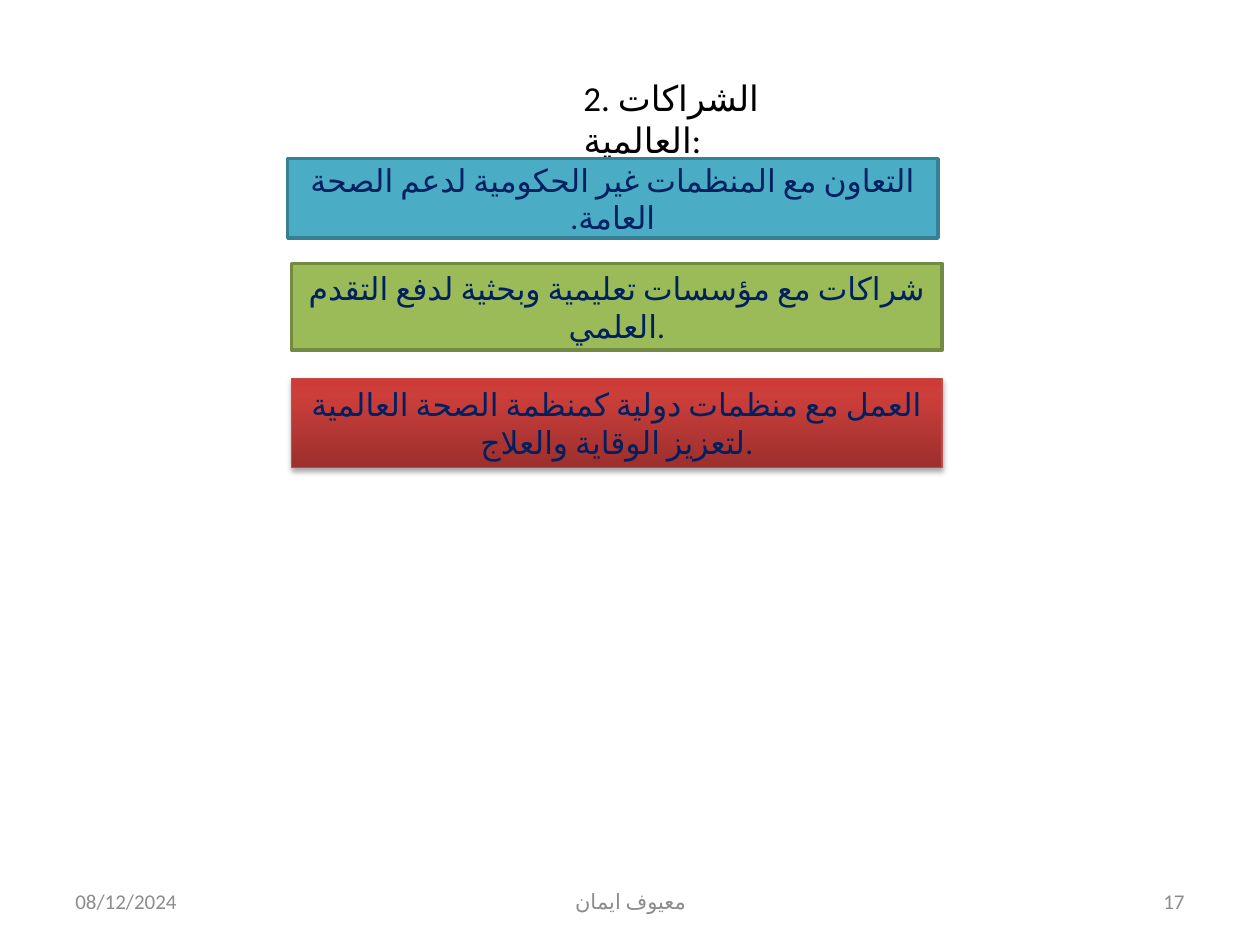
from copy import deepcopy
from lxml import etree
from pptx import Presentation
from pptx.dml.color import RGBColor
from pptx.enum import shapes, text
from pptx.oxml.ns import qn
from pptx.util import Cm, Pt

FONT = "Calibri"
BLACK = RGBColor(0x00, 0x00, 0x00)
NAVY = RGBColor(0x00, 0x20, 0x60)
GREY = RGBColor(0x8C, 0x8C, 0x8C)
BLUE = RGBColor(0x4B, 0xAC, 0xC6)
BLUE_EDGE = RGBColor(0x37, 0x7F, 0x92)
GREEN = RGBColor(0x9B, 0xBB, 0x59)
GREEN_EDGE = RGBColor(0x73, 0x8A, 0x42)
RED_EDGE = RGBColor(0xBF, 0x4C, 0x48)
RED_STOPS = [
    (0, RGBColor(0x9C, 0x2F, 0x2D)),
    (0.8, RGBColor(0xCB, 0x3E, 0x3A)),
    (1, RGBColor(0xCE, 0x3B, 0x37)),
]

LEFT, CENTER, RIGHT = text.PP_ALIGN.LEFT, text.PP_ALIGN.CENTER, text.PP_ALIGN.RIGHT
TOP, MIDDLE = text.MSO_ANCHOR.TOP, text.MSO_ANCHOR.MIDDLE

HEADING = "2. الشراكات العالمية:"
PARTNERSHIPS = [
    ("التعاون مع المنظمات غير الحكومية لدعم الصحة العامة.",
     (5.8, 3.2, 13.11, 1.6), BLUE, BLUE_EDGE, 2, True),
    ("شراكات مع مؤسسات تعليمية وبحثية لدفع التقدم العلمي.",
     (5.88, 5.31, 13.11, 1.75), GREEN, GREEN_EDGE, 2, False),
    ("العمل مع منظمات دولية كمنظمة الصحة العالمية لتعزيز الوقاية والعلاج.",
     (5.88, 7.63, 13.11, 1.8), RED_STOPS, RED_EDGE, 0.75, False),
]
FOOTER = [
    ("08/12/2024", 1.27, 5.92, LEFT),
    ("معيوف ايمان", 8.69, 8.05, CENTER),
    ("17", 18.21, 5.92, RIGHT),
]


def write(holder, words, size, color, align, anchor, rtl=False):
    frame = holder.text_frame
    frame.word_wrap = True
    frame.vertical_anchor = anchor
    paragraph = frame.paragraphs[0]
    paragraph.alignment = align
    if rtl:
        paragraph._p.get_or_add_pPr().set("rtl", "1")
    run = paragraph.add_run()
    run.text = words
    for key, value in {"size": Pt(size), "name": FONT}.items():
        setattr(run.font, key, value)
    run.font.color.rgb = color
    properties = run._r.get_or_add_rPr()
    properties.set("lang", "ar-DZ")
    etree.SubElement(properties, qn("a:cs"), typeface=FONT)


def add_label(slide, box, *style):
    write(slide.shapes.add_textbox(*map(Cm, box)), *style)


def shade(panel, stops):
    panel.fill.gradient()
    panel.fill.gradient_angle = 90
    stop_list = panel._element.spPr.find(".//" + qn("a:gsLst"))
    while len(stop_list) < len(stops):
        stop_list.append(deepcopy(stop_list[0]))
    for stop, (position, color) in zip(panel.fill.gradient_stops, stops):
        stop.position = position
        stop.color.rgb = color


def cast_shadow(panel):
    effects = panel._element.spPr.find(qn("a:effectLst"))
    shadow = etree.SubElement(effects, qn("a:outerShdw"), blurRad=str(Pt(3.1)),
                              dist=str(Pt(1.8)), dir="5400000", rotWithShape="0")
    tint = etree.SubElement(shadow, qn("a:srgbClr"), val="000000")
    etree.SubElement(tint, qn("a:alpha"), val="35000")


def add_panel(slide, words, box, fill, edge, edge_width, rtl):
    panel = slide.shapes.add_shape(shapes.MSO_SHAPE.RECTANGLE, *map(Cm, box))
    panel.shadow.inherit = False
    panel.line.color.rgb = edge
    panel.line.width = Pt(edge_width)
    if isinstance(fill, list):
        shade(panel, fill)
        cast_shadow(panel)
    else:
        panel.fill.solid()
        panel.fill.fore_color.rgb = fill
    write(panel, words, 18, NAVY, CENTER, MIDDLE, rtl)


def main():
    deck = Presentation()
    deck.slide_width, deck.slide_height = Cm(25.4), Cm(19.05)
    slide = deck.slides.add_slide(deck.slide_layouts[6])
    add_label(slide, (11.51, 1.42, 5.41, 1.12), HEADING, 20, BLACK, LEFT, TOP)
    for partnership in PARTNERSHIPS:
        add_panel(slide, *partnership)
    for words, left, width, align in FOOTER:
        add_label(slide, (left, 17.65, width, 1.02), words, 12, GREY, align, MIDDLE)
    deck.save("out.pptx")


if __name__ == "__main__":
    main()
